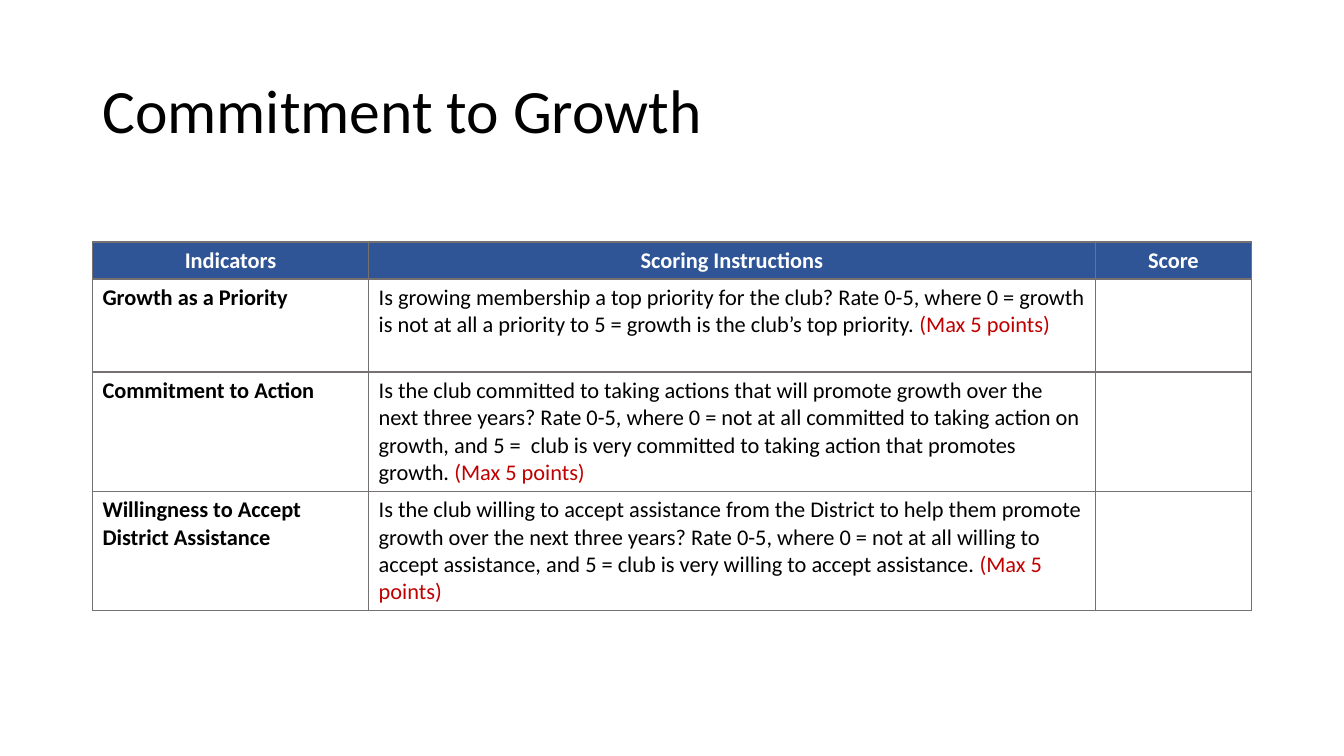
from dataclasses import dataclass

from lxml.etree import SubElement
from pptx import Presentation
from pptx.dml.color import RGBColor
from pptx.enum.text import MSO_ANCHOR, PP_ALIGN
from pptx.oxml.ns import qn
from pptx.util import Cm, Pt


@dataclass(frozen=True)
class Theme:
    font: str = "Calibri"
    ink: str = "000000"
    head: str = "2F5597"
    light: str = "FFFFFF"
    alert: str = "C00000"
    rule: str = "767171"
    title: int = 44
    body: int = 16
    line: int = 1


THEME = Theme()
LEFT, WIDTH = 2.33, 29.21
COLS = (6.96, 18.31, 3.94)
ROWS = (0.93, 2.34, 3.01, 3.01)
HEADS = ("Indicators", "Scoring Instructions", "Score")
LIMIT = "(Max 5 points)"
ITEMS = (
    ("Growth as a Priority",
     "Is growing membership a top priority for the club? Rate 0-5, where "
     "0 = growth is not at all a priority to 5 = growth is the club’s top "
     "priority. "),
    ("Commitment to Action",
     "Is the club committed to taking actions that will promote growth over "
     "the next three years? Rate 0-5, where 0 = not at all committed to "
     "taking action on growth, and 5 =  club is very committed to taking "
     "action that promotes growth. "),
    ("Willingness to Accept District Assistance",
     "Is the club willing to accept assistance from the District to help them "
     "promote growth over the next three years? Rate 0-5, where 0 = not at "
     "all willing to accept assistance, and 5 = club is very willing to "
     "accept assistance. "),
)


def assign(item, values):
    for name, value in values.items():
        setattr(item, name, value)


def add_run(para, text, color=THEME.ink, size=THEME.body, bold=False):
    run = para.add_run()
    run.text = text
    assign(run.font, {"name": THEME.font, "size": Pt(size), "bold": bold})
    run.font.color.rgb = RGBColor.from_string(color)


def add_title(slide, text):
    box = slide.shapes.add_textbox(Cm(LEFT), Cm(1.01), Cm(WIDTH), Cm(3.68))
    frame = box.text_frame
    assign(frame, {"word_wrap": True, "vertical_anchor": MSO_ANCHOR.MIDDLE})
    para = frame.paragraphs[0]
    para.line_spacing = 0.9
    add_run(para, text, size=THEME.title)


def add_rules(cell):
    props = cell._tc.get_or_add_tcPr()
    for side in ("a:lnL", "a:lnR", "a:lnT", "a:lnB"):
        line = SubElement(props, qn(side), w=str(Pt(THEME.line)))
        fill = SubElement(line, qn("a:solidFill"))
        SubElement(fill, qn("a:srgbClr"), val=THEME.rule)


def add_grid(slide):
    frame = slide.shapes.add_table(
        len(ROWS), len(COLS), Cm(LEFT), Cm(6.1), Cm(WIDTH), Cm(sum(ROWS)))
    table = frame.table
    assign(table, {"first_row": False, "horz_banding": False})
    for col, width in zip(table.columns, COLS):
        col.width = Cm(width)
    for row, height in zip(table.rows, ROWS):
        row.height = Cm(height)
    for cell in table.iter_cells():
        add_rules(cell)
        cell.fill.background()
    return table


def fill_head(table):
    for col, text in enumerate(HEADS):
        cell = table.cell(0, col)
        cell.fill.solid()
        cell.fill.fore_color.rgb = RGBColor.from_string(THEME.head)
        para = cell.text_frame.paragraphs[0]
        para.alignment = PP_ALIGN.CENTER
        add_run(para, text, THEME.light, bold=True)


def fill_body(table):
    for row, (name, guide) in enumerate(ITEMS, start=1):
        add_run(table.cell(row, 0).text_frame.paragraphs[0], name, bold=True)
        para = table.cell(row, 1).text_frame.paragraphs[0]
        add_run(para, guide)
        add_run(para, LIMIT, THEME.alert)


def main():
    deck = Presentation()
    assign(deck, {"slide_width": Cm(33.87), "slide_height": Cm(19.05)})
    slide = deck.slides.add_slide(deck.slide_layouts[6])

    # Heading
    add_title(slide, "Commitment to Growth")

    # Scoring table
    table = add_grid(slide)
    fill_head(table)
    fill_body(table)

    deck.save("out.pptx")


if __name__ == "__main__":
    main()
